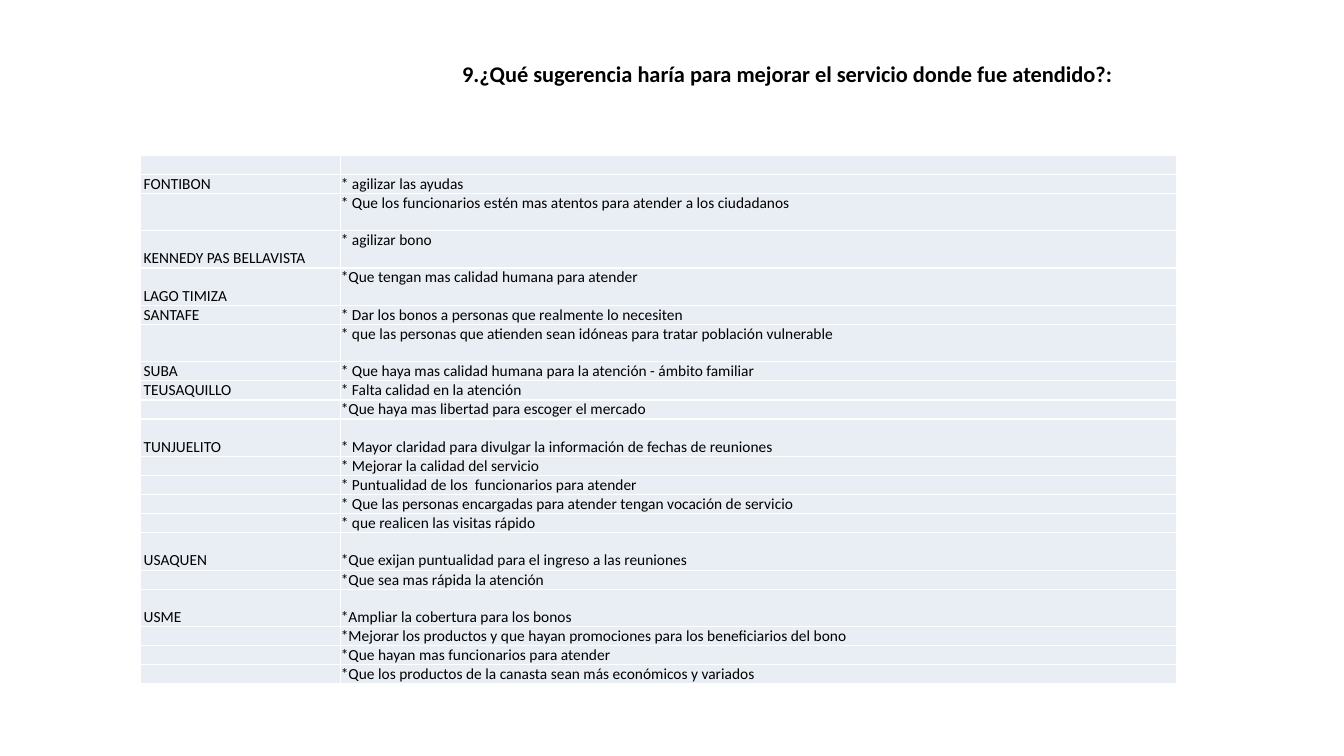
from lxml.etree import SubElement
from pptx import Presentation
from pptx.dml.color import RGBColor
from pptx.enum.text import MSO_ANCHOR, PP_ALIGN
from pptx.oxml.ns import qn
from pptx.util import Inches, Pt

TITLE = "9.¿Qué sugerencia haría para mejorar el servicio donde fue atendido?: "

# (locality, suggestion, row kind): "tall" rows are two lines high,
# "top" rows are tall with the suggestion on the first line.
SUGGESTIONS = [
    ("", "", ""),
    (" FONTIBON", "* agilizar las ayudas", ""),
    ("", "* Que los funcionarios estén mas atentos para atender a los ciudadanos", "top"),
    (" KENNEDY PAS BELLAVISTA", "* agilizar bono", "top"),
    (" LAGO TIMIZA", "*Que tengan mas calidad humana para atender", "top"),
    (" SANTAFE", "* Dar los bonos a personas que realmente lo necesiten", ""),
    ("", "* que las personas que atienden sean idóneas para tratar población vulnerable", "top"),
    (" SUBA", "* Que haya mas calidad humana para la atención - ámbito familiar", ""),
    (" TEUSAQUILLO", "* Falta calidad en la atención", ""),
    ("", "*Que haya mas libertad para escoger el mercado", ""),
    (" TUNJUELITO", "* Mayor claridad para divulgar la información de fechas de reuniones", "tall"),
    ("", "* Mejorar la calidad del servicio", ""),
    ("", "* Puntualidad de los  funcionarios para atender", ""),
    ("", "* Que las personas encargadas para atender tengan vocación de servicio", ""),
    ("", "* que realicen las visitas rápido", ""),
    (" USAQUEN", "*Que exijan puntualidad para el ingreso a las reuniones", "tall"),
    ("", "*Que sea mas rápida la atención", ""),
    (" USME", "*Ampliar la cobertura para los bonos", "tall"),
    ("", "*Mejorar los productos y que hayan promociones para los beneficiarios del bono", ""),
    ("", "*Que hayan mas funcionarios para atender", ""),
    ("", "*Que los productos de la canasta sean más económicos y variados", ""),
]
COLUMN_WIDTHS = (1.99, 8.29)
ROW_HEIGHTS = {"": 0.19, "tall": 0.37, "top": 0.37}
TABLE_LEFT, TABLE_TOP = 1.39, 1.54
FONT, INK, CELL_FILL, BORDER = "Calibri", "000000", "E9EDF4", "FFFFFF"
CELL_SIZE = 11


def color(hex_string):
    return RGBColor.from_string(hex_string)


def write(text_frame, text, size, bold=False):
    """Set the text and format it; an empty paragraph keeps the size too."""
    text_frame.text = text
    paragraph = text_frame.paragraphs[0]
    for run in paragraph.runs:
        run.font.name = FONT
        run.font.size = Pt(size)
        run.font.bold = bold
        run.font.color.rgb = color(INK)
    if not text:
        SubElement(paragraph._p, qn("a:endParaRPr"), sz=str(size * 100))
    return paragraph


def add_borders(cell):
    properties = cell._tc.get_or_add_tcPr()
    for position, side in enumerate(("lnL", "lnR", "lnT", "lnB")):
        line = SubElement(properties, qn(f"a:{side}"), w=str(Pt(1)))
        fill = SubElement(line, qn("a:solidFill"))
        SubElement(fill, qn("a:srgbClr"), val=BORDER)
        properties.insert(position, line)


def add_title(slide):
    box = slide.shapes.add_textbox(Inches(3.26), Inches(0.4), Inches(9.15), Inches(0.66))
    box.text_frame.word_wrap = True
    box.text_frame.vertical_anchor = MSO_ANCHOR.MIDDLE
    write(box.text_frame, TITLE, 16, bold=True).alignment = PP_ALIGN.CENTER


def add_suggestions(slide):
    heights = [ROW_HEIGHTS[kind] for _, _, kind in SUGGESTIONS]
    table = slide.shapes.add_table(
        len(SUGGESTIONS), len(COLUMN_WIDTHS), Inches(TABLE_LEFT), Inches(TABLE_TOP),
        Inches(sum(COLUMN_WIDTHS)), Inches(sum(heights))).table
    table.first_row = table.horz_banding = False
    for column, width in zip(table.columns, COLUMN_WIDTHS):
        column.width = Inches(width)
    for row, height, (locality, suggestion, kind) in zip(table.rows, heights, SUGGESTIONS):
        row.height = Inches(height)
        suggestion_anchor = MSO_ANCHOR.TOP if kind == "top" else MSO_ANCHOR.BOTTOM
        anchors = (MSO_ANCHOR.BOTTOM, suggestion_anchor)
        for cell, text, anchor in zip(row.cells, (locality, suggestion), anchors):
            cell.margin_left = cell.margin_right = cell.margin_top = cell.margin_bottom = 0
            cell.vertical_anchor = anchor
            cell.fill.solid()
            cell.fill.fore_color.rgb = color(CELL_FILL)
            add_borders(cell)
            write(cell.text_frame, text, CELL_SIZE)


def main():
    presentation = Presentation()
    presentation.slide_width = Inches(13.33)
    presentation.slide_height = Inches(7.5)
    slide = presentation.slides.add_slide(presentation.slide_layouts[6])
    add_title(slide)
    add_suggestions(slide)
    presentation.save("out.pptx")


if __name__ == "__main__":
    main()
